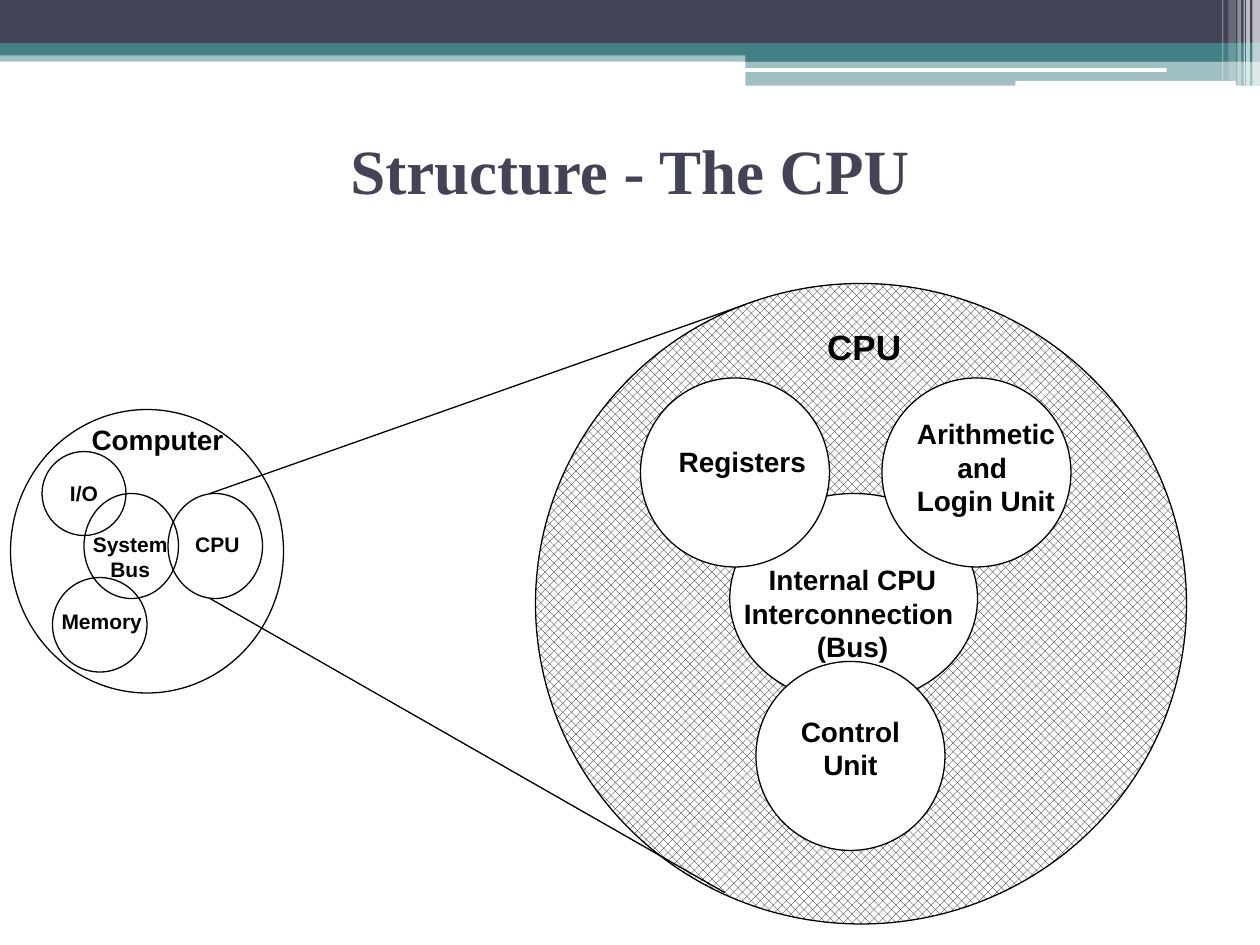
from dataclasses import dataclass

from lxml import etree
from pptx import Presentation
from pptx import util as u
from pptx.dml.color import RGBColor
from pptx.enum import dml, shapes, text
from pptx.oxml import ns

COLUMNS, ROWS = 120, 90


@dataclass(frozen=True)
class Theme:
    navy: str = "424456"
    teal: str = "438086"
    white: str = "FFFFFF"
    black: str = "000000"
    title_font: str = "Times New Roman"
    label_font: str = "Arial"
    title_size: int = 36
    large: int = 20
    medium: int = 16
    small: int = 12
    outline: float = 0.75


class Diagram:
    """Draws on one slide; every length is in grid columns and rows."""

    def __init__(self, presentation, theme):
        self.theme = theme
        self.slide = presentation.slides.add_slide(presentation.slide_layouts[6])
        self.column = presentation.slide_width / COLUMNS
        self.row = presentation.slide_height / ROWS

    def place(self, x, y):
        return u.Emu(round(x * self.column)), u.Emu(round(y * self.row))

    def shape(self, kind, left, top, width, height):
        shape = self.slide.shapes.add_shape(
            kind, *self.place(left, top), *self.place(width, height))
        shape.shadow.inherit = False
        return shape

    def bar(self, left, top, width, height, color, opacity=100, rounded=False):
        kind = shapes.MSO_SHAPE.ROUNDED_RECTANGLE if rounded else shapes.MSO_SHAPE.RECTANGLE
        shape = self.shape(kind, left, top, width, height)
        shape.fill.solid()
        shape.fill.fore_color.rgb = RGBColor.from_string(color)
        shape.line.fill.background()
        if opacity < 100:
            node = shape.element.spPr.find(".//" + ns.qn("a:srgbClr"))
            etree.SubElement(node, ns.qn("a:alpha"), val=str(opacity * 1000))

    def circle(self, left, top, width, height, fill=None, hatched=False):
        shape = self.shape(shapes.MSO_SHAPE.OVAL, left, top, width, height)
        if hatched:
            shape.fill.patterned()
            shape.fill.pattern = dml.MSO_PATTERN.PERCENT_50
            shape.fill.fore_color.rgb = RGBColor.from_string(self.theme.black)
            shape.fill.back_color.rgb = RGBColor.from_string(self.theme.white)
        elif fill:
            shape.fill.solid()
            shape.fill.fore_color.rgb = RGBColor.from_string(fill)
        else:
            shape.fill.background()
        self.outline(shape.line)
        return shape

    def outline(self, line):
        line.color.rgb = RGBColor.from_string(self.theme.black)
        line.width = u.Pt(self.theme.outline)

    def line(self, start, end):
        connector = self.slide.shapes.add_connector(
            shapes.MSO_CONNECTOR.STRAIGHT, *self.place(*start), *self.place(*end))
        self.outline(connector.line)
        etree.SubElement(connector.element.spPr, ns.qn("a:effectLst"))

    def add_text(self, shape, lines, size, font=None, color=None, wrap=False):
        frame = shape.text_frame
        frame.word_wrap = wrap
        frame.vertical_anchor = text.MSO_ANCHOR.MIDDLE
        for index, words in enumerate(lines):
            paragraph = frame.add_paragraph() if index else frame.paragraphs[0]
            paragraph.alignment = text.PP_ALIGN.CENTER
            run = paragraph.add_run()
            run.text = words
            run.font.name = font or self.theme.label_font
            run.font.size = u.Pt(size)
            run.font.bold = True
            run.font.color.rgb = RGBColor.from_string(color or self.theme.black)

    def title(self, words):
        box = self.slide.shapes.add_textbox(*self.place(6, 9.12), *self.place(108, 14))
        self.add_text(box, [words], self.theme.title_size, self.theme.title_font,
                      self.theme.navy, wrap=True)

    def label(self, center_x, center_y, width, lines, size):
        """Centre a text box on a point; its height follows the line count."""
        height = len(lines) * size * 0.2 + 1.2
        box = self.slide.shapes.add_textbox(
            *self.place(center_x - width / 2, center_y - height / 2),
            *self.place(width, height))
        self.add_text(box, lines, size)
        box.text_frame.auto_size = text.MSO_AUTO_SIZE.SHAPE_TO_FIT_TEXT


def draw_header(diagram, theme):
    diagram.bar(0, 4.8, 120, 1.08, theme.teal, 50)
    diagram.bar(0, 0, 120, 4.08, theme.navy)
    diagram.bar(0, 4.08, 120, 1.2, theme.teal)
    diagram.bar(71, 4.68, 49, 1.2, theme.teal)
    diagram.bar(71, 5.8, 49, 2.36, theme.teal, 50)
    diagram.bar(70.9, 6.5, 40.2, 0.36, theme.white, rounded=True)
    diagram.bar(96.7, 7.7, 21, 0.48, theme.white, rounded=True)
    stripes = [(119.28, 0.72, 8.16, 65), (118.68, 0.36, 8.16, 65),
               (118.44, 0.12, 8.16, 60), (117.84, 0.36, 8.16, 40),
               (117, 0.72, 7.68, 20), (116.4, 0.12, 7.68, 30)]
    for left, width, height, opacity in stripes:
        diagram.bar(left, 0, width, height, theme.white, opacity)


def draw_cpu(diagram, theme):
    diagram.circle(51, 27, 62, 61, hatched=True)
    diagram.circle(69.5, 47, 23.6, 20, theme.white)
    for left, top in [(61, 36), (84, 36), (72, 63)]:
        diagram.circle(left, top, 18, 18, theme.white)
    diagram.label(82.3, 33, 9.5, ["CPU"], theme.large)
    for x, y, width, lines in [
        (70.7, 43.9, 14.6, ["Registers"]),
        (93.9, 44.5, 15.7, ["Arithmetic", "and ", "Login Unit"]),
        (81.2, 58.4, 23.3, ["Internal CPU", "Interconnection ", "(Bus)"]),
        (81, 71.2, 12, ["Control", "Unit"]),
    ]:
        diagram.label(x, y, width, lines, theme.medium)


def draw_computer(diagram, theme):
    diagram.circle(1, 39, 26, 27)
    diagram.label(15, 41.8, 15.1, ["Computer"], theme.medium)
    diagram.add_text(diagram.circle(4, 43, 8, 8), ["I/O"], theme.small)
    for left, top, width, height in [(16, 47, 9, 10), (5, 55, 9, 9), (8, 47, 9, 10)]:
        diagram.circle(left, top, width, height)
    for x, y, width, lines in [
        (20.7, 51.8, 6.6, ["CPU"]),
        (9.7, 59.2, 10.1, ["Memory"]),
        (12.4, 53, 9.5, ["System", "Bus"]),
    ]:
        diagram.label(x, y, width, lines, theme.small)


def main():
    theme = Theme()
    presentation = Presentation()
    presentation.slide_width = u.Inches(10)
    presentation.slide_height = u.Inches(7.5)
    diagram = Diagram(presentation, theme)
    draw_header(diagram, theme)
    diagram.title("Structure - The CPU")
    draw_cpu(diagram, theme)
    diagram.line((20, 47), (71, 29))
    diagram.line((20, 57), (69, 85))
    draw_computer(diagram, theme)
    presentation.save("out.pptx")


if __name__ == "__main__":
    main()
